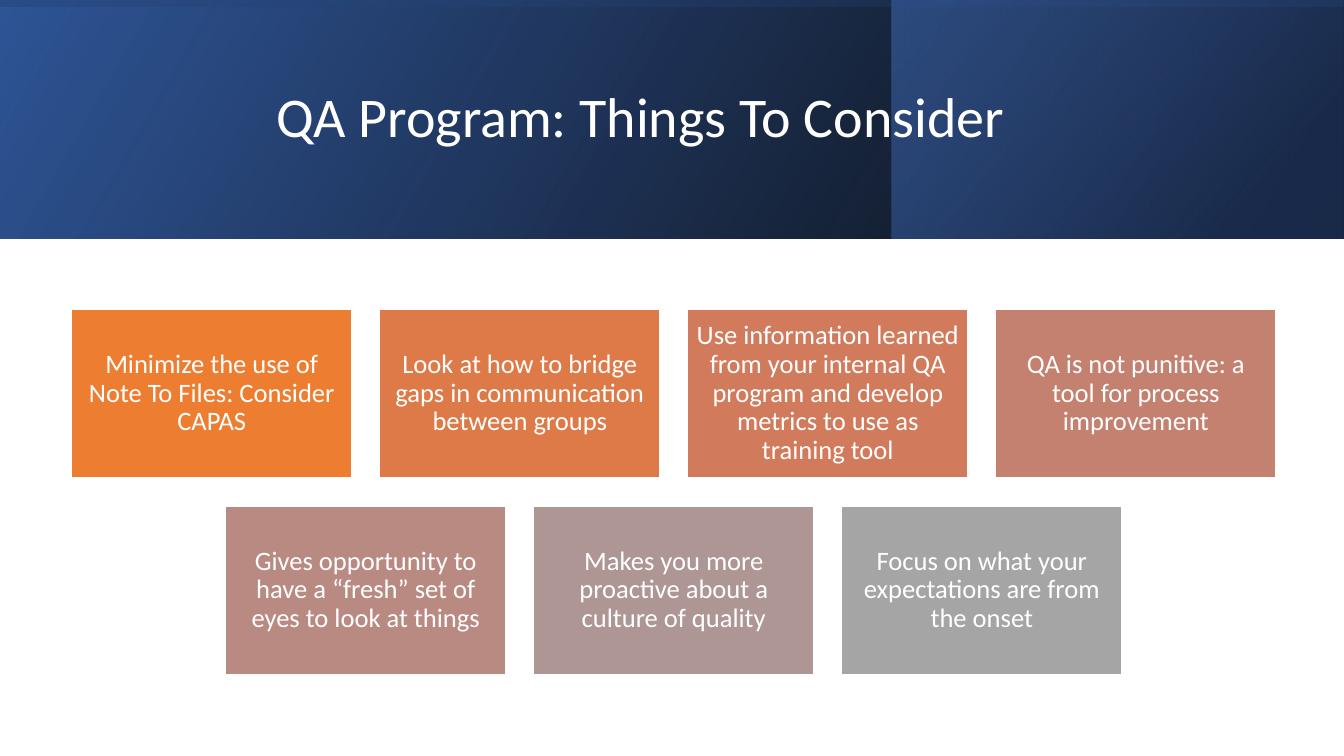
from dataclasses import dataclass

from pptx import Presentation
from pptx.dml.color import RGBColor
from pptx.enum.shapes import MSO_SHAPE
from pptx.enum.text import MSO_ANCHOR, PP_ALIGN
from pptx.oxml.ns import qn
from pptx.shapes.autoshape import Shape
from pptx.slide import Slide
from pptx.util import Inches, Pt
from lxml.etree import SubElement

WHITE = RGBColor(0xFF, 0xFF, 0xFF)
BLACK = RGBColor(0x00, 0x00, 0x00)
NAVY = RGBColor(0x20, 0x38, 0x64)
DEEP = RGBColor(0x2F, 0x55, 0x97)
BLUE = RGBColor(0x44, 0x72, 0xC4)

WIDTH, HEIGHT = 13.33, 7.5
BAND = 2.37
CARD_W, CARD_H = 2.78, 1.67
STEP_X, STEP_Y = 3.055, 1.95
LEFT, TOP = 0.71, 3.07
ROW = 4


@dataclass
class Stop:
    place: float
    color: RGBColor
    alpha: int


@dataclass
class Panel:
    left: float
    top: float
    width: float
    height: float
    angle: int
    stops: tuple[Stop, Stop]
    turn: int = 0


@dataclass
class Card:
    text: str
    color: RGBColor


PANELS = [
    Panel(0, 0, WIDTH, BAND, 330, (Stop(0, BLACK, 96), Stop(1, DEEP, 100))),
    Panel(8.84, 0, 4.48, BAND, 320, (Stop(0.19, NAVY, 68), Stop(1, BLUE, 48))),
    Panel((WIDTH - BAND) / 2, (BAND - WIDTH) / 2, BAND, WIDTH, 350,
          (Stop(0.23, DEEP, 16), Stop(0.99, BLACK, 45)), turn=270),
]

CARDS = [
    Card("Minimize the use of Note To Files: Consider CAPAS",
         RGBColor(0xED, 0x7D, 0x31)),
    Card("Look at how to bridge gaps in communication between groups",
         RGBColor(0xDE, 0x7A, 0x47)),
    Card("Use information learned from your internal QA program and develop "
         "metrics to use as training tool", RGBColor(0xD1, 0x7B, 0x5C)),
    Card("QA is not punitive: a tool for process improvement",
         RGBColor(0xC4, 0x81, 0x70)),
    Card("Gives opportunity to have a “fresh” set of eyes to look at things",
         RGBColor(0xB9, 0x8A, 0x82)),
    Card("Makes you more proactive about a culture of quality",
         RGBColor(0xAE, 0x96, 0x94)),
    Card("Focus on what your expectations are from the onset",
         RGBColor(0xA5, 0xA5, 0xA5)),
]


def add_rect(slide: Slide, left: float, top: float,
             width: float, height: float) -> Shape:
    rect = slide.shapes.add_shape(MSO_SHAPE.RECTANGLE, Inches(left),
                                  Inches(top), Inches(width), Inches(height))
    rect.shadow.inherit = False
    return rect


def put_text(shape: Shape, text: str, *, size: float, align: PP_ALIGN,
             inset: tuple[float, float]) -> None:
    """Fill the shape with text; inset is its side and its top margin."""
    frame = shape.text_frame
    frame.word_wrap = True
    frame.vertical_anchor = MSO_ANCHOR.MIDDLE
    frame.margin_left = frame.margin_right = Inches(inset[0])
    frame.margin_top = frame.margin_bottom = Inches(inset[1])
    para = frame.paragraphs[0]
    para.alignment = align
    para.line_spacing = 0.9
    run = para.add_run()
    run.text = text
    run.font.size = Pt(size)
    run.font.name = "Calibri"
    run.font.color.rgb = WHITE


def draw_panel(slide: Slide, panel: Panel) -> None:
    rect = add_rect(slide, panel.left, panel.top, panel.width, panel.height)
    rect.rotation = panel.turn
    rect.line.fill.background()
    rect.fill.gradient()
    rect.fill.gradient_angle = 360 - panel.angle
    for mark, stop in zip(rect.fill.gradient_stops, panel.stops):
        mark.position = stop.place
        mark.color.rgb = stop.color
    props = rect.element.spPr
    props.find(qn("a:xfrm")).set("flipH", "1")
    for tint, stop in zip(props.iter(qn("a:srgbClr")), panel.stops):
        SubElement(tint, qn("a:alpha")).set("val", str(stop.alpha * 1000))


def draw_card(slide: Slide, card: Card, index: int) -> None:
    """Place the card in its row; the second row is set in by half a step."""
    row, col = divmod(index, ROW)
    rect = add_rect(slide, LEFT + (col + row / 2) * STEP_X,
                    TOP + row * STEP_Y, CARD_W, CARD_H)
    rect.fill.solid()
    rect.fill.fore_color.rgb = card.color
    rect.line.color.rgb = WHITE
    rect.line.width = Pt(1)
    put_text(rect, card.text, size=19, align=PP_ALIGN.CENTER,
             inset=(0.08, 0.08))


def main() -> None:
    deck = Presentation()
    deck.slide_width, deck.slide_height = Inches(WIDTH), Inches(HEIGHT)
    slide = deck.slides.add_slide(deck.slide_layouts[6])
    for panel in PANELS:
        draw_panel(slide, panel)
    title = slide.shapes.add_textbox(Inches(2.64), Inches(0.32),
                                     Inches(7.56), Inches(1.72))
    put_text(title, "QA Program: Things To Consider", size=40,
             align=PP_ALIGN.LEFT, inset=(0.1, 0.05))
    for index, card in enumerate(CARDS):
        draw_card(slide, card, index)
    deck.save("out.pptx")


if __name__ == "__main__":
    main()
